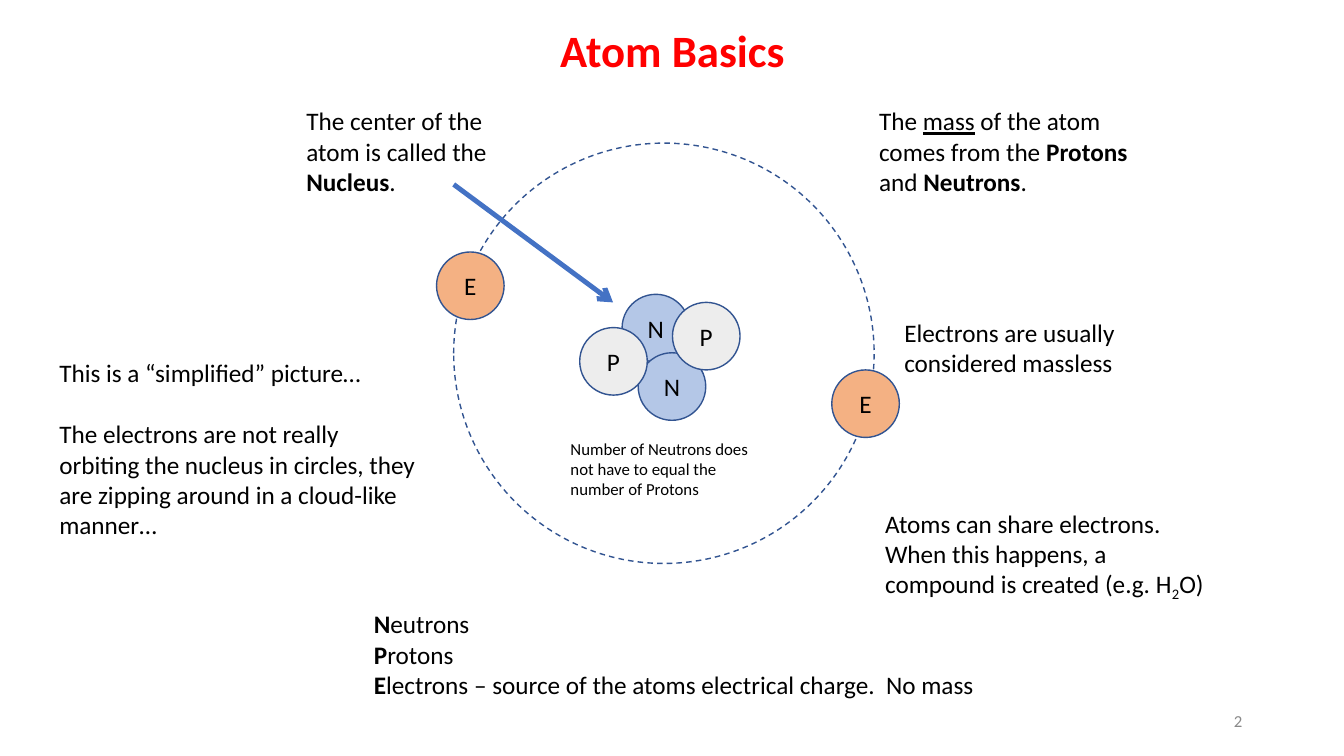
import pptx
import pptx.util
import pptx.dml.color
import pptx.enum.dml
import pptx.enum.shapes
import pptx.enum.text
import lxml.etree

Inches = pptx.util.Inches
Pt = pptx.util.Pt
Align = pptx.enum.text.PP_ALIGN
Anchor = pptx.enum.text.MSO_ANCHOR
Kind = pptx.enum.shapes.MSO_SHAPE

BOLD = {"bold": True}
LINE = {"underline": True}
SUB = {"base": "-25000"}
BLACK, EDGE = "000000", "325491"
SIZE = 0.67

TITLE = "Atom Basics"
ORBIT = (4.5, 1.42, 4.17, 4.17)
ARROW = (4.5, 1.83, 6.08, 3)
FILLS = {"N": "B4C7E7", "P": "EDEDED", "E": "F4B183"}
PARTS = [
    ("N", 6.17, 2.92),
    ("N", 6.33, 3.5),
    ("P", 6.67, 3),
    ("P", 5.75, 3.25),
    ("E", 8.25, 3.67),
    ("E", 4.33, 2.5),
]
NOTES = [
    ((3.61, 5.99, 7.45, 1.01), 18, [
        [("N", BOLD), ("eutrons", {})],
        [("P", BOLD), ("rotons", {})],
        [("E", BOLD), ("lectrons – source of the atoms electrical charge.  No mass", {})],
    ]),
    ((8.62, 1, 2.75, 1.01), 18, [
        [("The ", {}), ("mass", LINE), (" of the atom comes from the ", {}),
         ("Protons", BOLD), (" and ", {}), ("Neutrons", BOLD), (".", {})],
    ]),
    ((0.49, 3.5, 3.76, 1.92), 18, [
        [("This is a “simplified” picture…", {})],
        [("The electrons are not really orbiting the nucleus in circles, "
          "they are zipping around in a cloud-like manner…", {})],
    ]),
    ((2.94, 1, 2.08, 1.01), 18, [
        [("The center of the atom is called the ", {}), ("Nucleus", BOLD), (".", {})],
    ]),
    ((8.68, 4.99, 3.49, 1.01), 18, [
        [("Atoms can share electrons.  When this happens, a compound is created (e.g. H", {}),
         ("2", SUB), ("O)", {})],
    ]),
    ((8.87, 3.1, 2.75, 0.71), 18, [
        [("Electrons are usually considered massless", {})],
    ]),
    ((5.56, 4.3, 2.05, 0.71), 12, [
        [("Number of Neutrons does not have to equal the number of Protons", {})],
    ]),
]
PAGE = ((9.42, 6.95, 3, 0.4), 12, [[("2", {})]])
GAP = {2: Pt(22)}


def color(code):
    return pptx.dml.color.RGBColor.from_string(code)


def apply(item, form):
    for key, value in form.items():
        setattr(item, key, value)


def place(item, box):
    apply(item, dict(zip(("left", "top", "width", "height"), map(Inches, box))))


def add_run(para, text, size, code, form):
    run = para.add_run()
    run.text = text
    font = {key: val for key, val in form.items() if key != "base"}
    apply(run.font, {"name": "Calibri", "size": Pt(size), **font})
    run.font.color.rgb = color(code)
    if "base" in form:
        run._r.get_or_add_rPr().set("baseline", form["base"])


def add_note(slide, box, size, paras, code=BLACK, align=Align.LEFT, anchor=Anchor.TOP):
    frame = slide.shapes.add_textbox(*map(Inches, box)).text_frame
    apply(frame, {"word_wrap": True, "vertical_anchor": anchor})
    for num, runs in enumerate(paras):
        para = frame.add_paragraph() if num else frame.paragraphs[0]
        para.alignment = align
        if num and len(paras) in GAP:
            para.space_before = GAP[len(paras)]
        for text, form in runs:
            add_run(para, text, size, code, form)


def add_ring(slide, box, fill=None):
    ring = slide.shapes.add_shape(Kind.OVAL, *map(Inches, box))
    ring.shadow.inherit = False
    if fill:
        ring.fill.solid()
        ring.fill.fore_color.rgb = color(fill)
    else:
        ring.fill.background()
    ring.line.color.rgb = color(EDGE)
    ring.line.width = Pt(1)
    return ring


def add_part(slide, mark, left, top):
    frame = add_ring(slide, (left, top, SIZE, SIZE), FILLS[mark]).text_frame
    apply(frame, {
        "margin_left": 0, "margin_right": 0, "margin_top": 0, "margin_bottom": 0,
        "word_wrap": False, "vertical_anchor": Anchor.MIDDLE,
    })
    frame.paragraphs[0].alignment = Align.CENTER
    add_run(frame.paragraphs[0], mark, 18, BLACK, {})


def add_arrow(slide, ends):
    arrow = slide.shapes.add_connector(
        pptx.enum.shapes.MSO_CONNECTOR.STRAIGHT, *map(Inches, ends))
    arrow.line.color.rgb = color("4472C4")
    arrow.line.width = Pt(3.5)
    space = "{http://schemas.openxmlformats.org/drawingml/2006/main}"
    props = arrow._element.spPr
    tip = lxml.etree.SubElement(props.find(space + "ln"), space + "tailEnd")
    tip.set("type", "arrow")
    lxml.etree.SubElement(props, space + "effectLst")


def add_title(slide):
    title = slide.shapes.title
    place(title, (2.17, 0.18, 9, 0.7))
    apply(title.text_frame, {
        "vertical_anchor": Anchor.MIDDLE,
        "auto_size": pptx.enum.text.MSO_AUTO_SIZE.NONE,
    })
    para = title.text_frame.paragraphs[0]
    apply(para, {"alignment": Align.CENTER, "line_spacing": 0.9})
    add_run(para, TITLE, 32, "FF0000", BOLD)


def main():
    deck = pptx.Presentation()
    apply(deck, {"slide_width": Inches(13.33), "slide_height": Inches(7.5)})
    slide = deck.slides.add_slide(deck.slide_layouts[5])
    add_title(slide)
    orbit = add_ring(slide, ORBIT)
    orbit.line.dash_style = pptx.enum.dml.MSO_LINE.DASH
    add_note(slide, *PAGE, code="898989", align=Align.RIGHT, anchor=Anchor.MIDDLE)
    for part in PARTS:
        add_part(slide, *part)
    for note in NOTES:
        add_note(slide, *note)
    add_arrow(slide, ARROW)
    deck.save("out.pptx")


if __name__ == "__main__":
    main()
